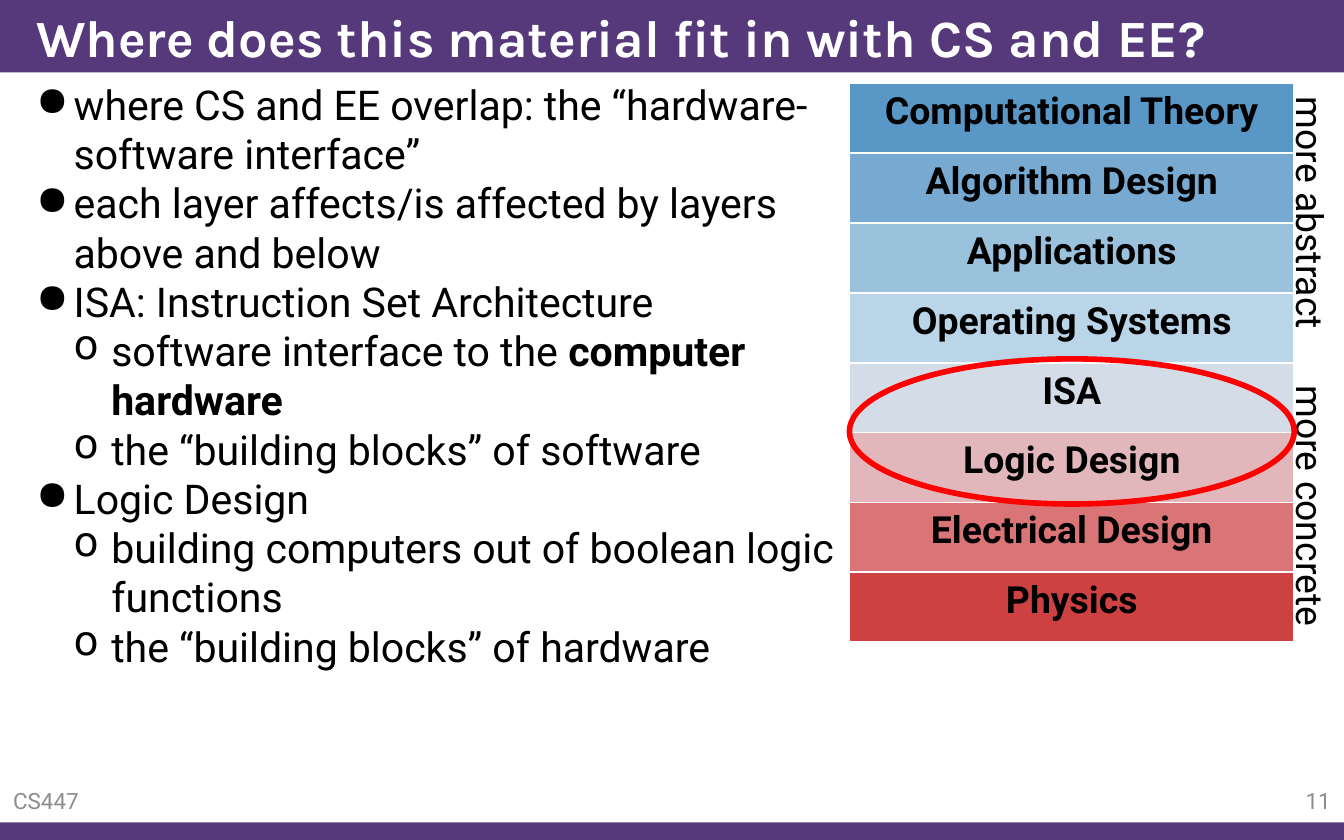
from lxml.etree import SubElement
from pptx import Presentation
from pptx.dml.color import RGBColor
from pptx.enum.shapes import MSO_SHAPE
from pptx.enum.text import MSO_ANCHOR, PP_ALIGN
from pptx.oxml.ns import qn
from pptx.util import Inches, Pt

COLORS = {"purple": "56397B", "white": "FFFFFF", "black": "000000",
          "gray": "8C8C8C", "red": "FF0000"}
LAYERS = [("Computational Theory", "5997C7"), ("Algorithm Design", "78AAD1"),
          ("Applications", "9BC2DD"), ("Operating Systems", "BBD5E8"),
          ("ISA", "D4DCE8"), ("Logic Design", "E1B7BB"),
          ("Electrical Design", "D97577"), ("Physics", "CE4143")]
# Each point is its level, plain text and bold ending
POINTS = [(0, "where CS and EE overlap: the “hardware-software interface”", ""),
          (0, "each layer affects/is affected by layers above and below", ""),
          (0, "ISA: Instruction Set Architecture", ""),
          (1, "software interface to the ", "computer hardware"),
          (1, "the “building blocks” of software", ""),
          (0, "Logic Design", ""),
          (1, "building computers out of boolean logic functions", ""),
          (1, "the “building blocks” of hardware", "")]
BULLETS = "●o"
INDENT = 0.28


def style(para, size, color="black", face="Roboto", bold=None):
    font = para.font
    font.size, font.name, font.bold = Pt(size), face, bold
    font.color.rgb = RGBColor.from_string(COLORS[color])


def add_text_box(page, box, text, size, color="black", face="Roboto", bold=None,
                 align=PP_ALIGN.LEFT, anchor=MSO_ANCHOR.MIDDLE):
    shape = page.shapes.add_textbox(*map(Inches, box))
    frame = shape.text_frame
    frame.word_wrap = True
    frame.vertical_anchor = anchor
    para = frame.paragraphs[0]
    para.text = text
    para.alignment = align
    style(para, size, color, face, bold)
    return shape


def add_band(page, box):
    band = page.shapes.add_shape(MSO_SHAPE.RECTANGLE, *map(Inches, box))
    band.shadow.inherit = False
    band.fill.solid()
    band.fill.fore_color.rgb = RGBColor.from_string(COLORS["purple"])
    band.line.fill.background()


def add_header(page, box):
    left, top, width, height = box
    add_band(page, box)
    add_text_box(page, (left + 0.17, top, width - 0.17, height),
                 "Where does this material fit in with CS and EE?",
                 28, "white", "Karla", True)


def add_footer(page, box):
    left, top, width, height = box
    text_height = 0.33
    add_band(page, (left, top + text_height, width, height - text_height))
    add_text_box(page, (left, top, 1.33, text_height), "CS447", 12, "gray")
    add_text_box(page, (left + width - 0.75, top, 0.75, text_height), "11", 12,
                 "gray", align=PP_ALIGN.RIGHT)


def add_points(page, box):
    frame = page.shapes.add_textbox(*map(Inches, box)).text_frame
    frame.word_wrap = True
    for index, (level, plain, strong) in enumerate(POINTS):
        para = frame.add_paragraph() if index else frame.paragraphs[0]
        para.level = level
        props = para._p.get_or_add_pPr()
        props.set("marL", str(Inches(INDENT * (level + 1))))
        props.set("indent", str(Inches(-INDENT)))
        SubElement(props, qn("a:buChar")).set("char", BULLETS[level])
        style(para, 22)
        para.add_run().text = plain
        if strong:
            span = para.add_run()
            span.text = strong
            span.font.bold = True


def add_cell_borders(cell):
    props = cell._tc.get_or_add_tcPr()
    for index, side in enumerate(("lnL", "lnR", "lnT", "lnB")):
        line = props.makeelement(qn(f"a:{side}"), {"w": str(Pt(1))})
        fill = SubElement(line, qn("a:solidFill"))
        SubElement(fill, qn("a:srgbClr")).set("val", COLORS["white"])
        props.insert(index, line)  # borders come before the fill


def add_layer_stack(page, box):
    left, top, width, height = box
    row_height = height / len(LAYERS)
    table = page.shapes.add_table(len(LAYERS), 1, *map(Inches, box)).table
    for row, (name, color) in enumerate(LAYERS):
        table.rows[row].height = Inches(row_height)
        cell = table.cell(row, 0)
        cell.fill.solid()
        cell.fill.fore_color.rgb = RGBColor.from_string(color)
        add_cell_borders(cell)
        para = cell.text_frame.paragraphs[0]
        para.text = name
        para.alignment = PP_ALIGN.CENTER
        style(para, 20, bold=True)

    # Ring around the ISA and Logic Design layers
    ring = page.shapes.add_shape(
        MSO_SHAPE.OVAL, Inches(left), Inches(top + 4 * row_height - 0.03),
        Inches(width), Inches(2 * row_height + 0.04))
    ring.shadow.inherit = False
    ring.fill.background()
    ring.line.color.rgb = RGBColor.from_string(COLORS["red"])
    ring.line.width = Pt(3)


def add_scale_labels(page, box):
    """Turn one label per end of the scale to read downwards."""
    left, top, width, height = box
    length = 2.01
    for label, start in (("more abstract", top),
                         ("more concrete", top + height - length)):
        turned = (left + (width - length) / 2, start + (length - width) / 2,
                  length, width)
        add_text_box(page, turned, label, 20, anchor=MSO_ANCHOR.TOP).rotation = 90


def main():
    deck = Presentation()
    deck.slide_width, deck.slide_height = Inches(10), Inches(6.25)
    page = deck.slides.add_slide(deck.slide_layouts[6])
    add_header(page, (0, 0, 10, 0.54))
    add_footer(page, (0, 5.79, 10, 0.46))
    add_scale_labels(page, (9.53, 0.62, 0.44, 4.16))
    add_points(page, (0.17, 0.54, 6.15, 5.04))
    add_layer_stack(page, (6.32, 0.62, 3.31, 4.16))
    deck.save("out.pptx")


if __name__ == "__main__":
    main()
